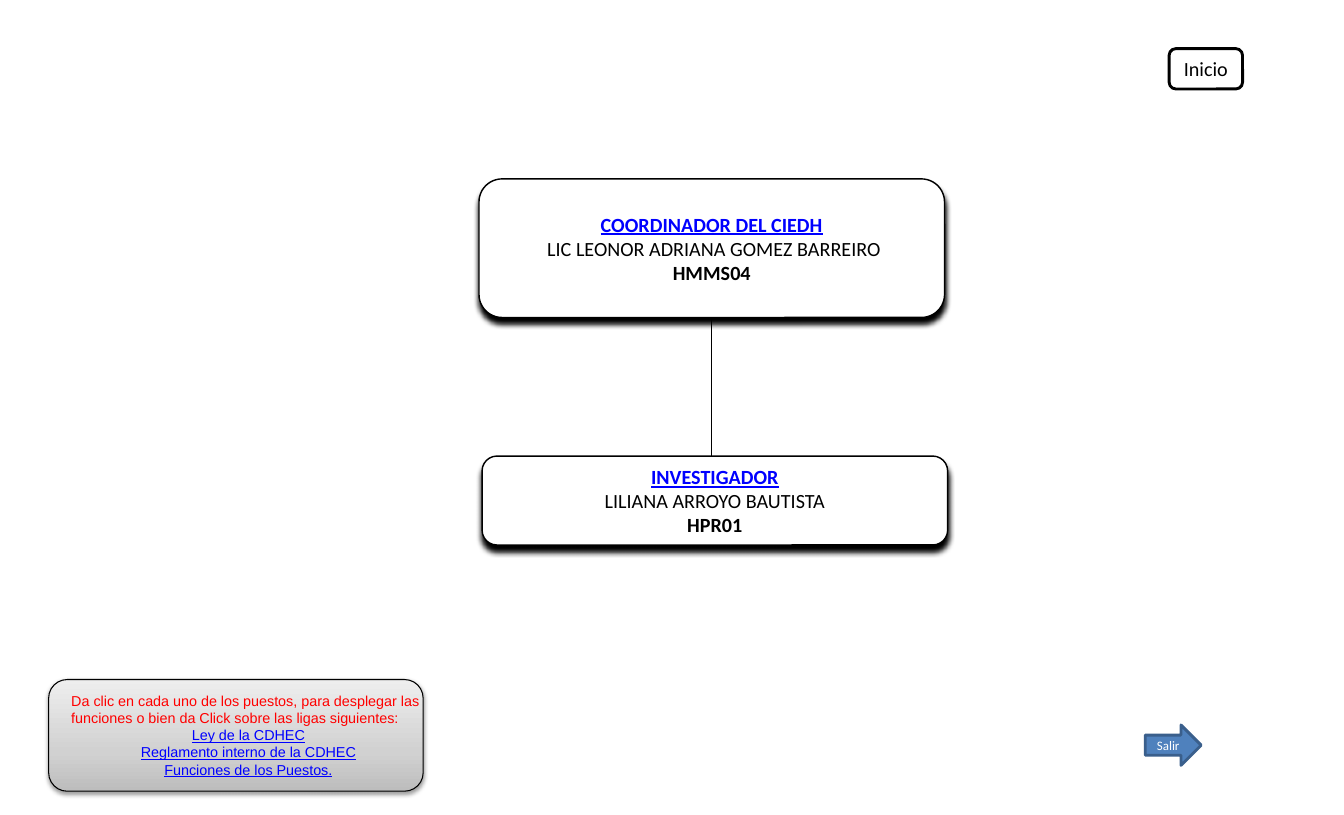
import pptx
import pptx.dml.color
import pptx.enum.shapes
import pptx.enum.text
import pptx.oxml
import pptx.oxml.ns
import pptx.util
from pptx.dml.color import RGBColor
from pptx.enum.shapes import MSO_SHAPE
from pptx.enum.text import MSO_ANCHOR, PP_ALIGN
from pptx.util import Inches

BLACK = RGBColor(0x00, 0x00, 0x00)
WHITE = RGBColor(0xFF, 0xFF, 0xFF)
RED = RGBColor(0xFF, 0x00, 0x00)
LINK_BLUE = RGBColor(0x00, 0x00, 0xFF)
ARROW_BLUE = RGBColor(0x4F, 0x81, 0xBD)
ARROW_EDGE = RGBColor(0x3A, 0x5F, 0x8C)
PANEL_STOPS = [
    (0, RGBColor(0xBD, 0xBD, 0xBD)),
    (35, RGBColor(0xD1, 0xD1, 0xD1)),
    (100, RGBColor(0xEE, 0xEE, 0xEE)),
]
LINKS = ["Ley de la CDHEC", "Reglamento interno de la CDHEC", "Funciones de los Puestos."]


def add_block(slide, kind, box, fill, line, line_width):
    """Add a shape without a shadow; a fill of None leaves the fill to the caller."""
    shape = slide.shapes.add_shape(kind, *map(Inches, box))
    shape.shadow.inherit = False
    if fill is not None:
        shape.fill.solid()
        shape.fill.fore_color.rgb = fill
    shape.line.color.rgb = line
    shape.line.width = pptx.util.Pt(line_width)
    return shape


def add_shadow(shape, opacity, blur, distance):
    """Cast a black shadow straight down; blur and distance are in points."""
    effects = shape._element.spPr.find(pptx.oxml.ns.qn("a:effectLst"))
    effects.append(pptx.oxml.parse_xml(
        f'<a:outerShdw {pptx.oxml.ns.nsdecls("a")} blurRad="{pptx.util.Pt(blur)}" '
        f'dist="{pptx.util.Pt(distance)}" dir="5400000" algn="ctr" rotWithShape="0">'
        f'<a:srgbClr val="{BLACK}"><a:alpha val="{opacity * 1000}"/></a:srgbClr>'
        '</a:outerShdw>'))


def set_gradient(shape, stops):
    """Fill with the stops running from bottom to top."""
    shape.fill.gradient()
    shape.fill.gradient_angle = 90
    stop_list = shape._element.spPr.find(".//" + pptx.oxml.ns.qn("a:gsLst"))
    for stop in list(stop_list):
        stop_list.remove(stop)
    for position, color in stops:
        stop_list.append(pptx.oxml.parse_xml(
            f'<a:gs {pptx.oxml.ns.nsdecls("a")} pos="{position * 1000}">'
            f'<a:srgbClr val="{color}"/></a:gs>'))


def write_line(paragraph, text, font, size, color, bold=False, underline=False,
               align=PP_ALIGN.CENTER):
    paragraph.text = text
    paragraph.alignment = align
    paragraph.font.name = font
    paragraph.font.size = pptx.util.Pt(size)
    paragraph.font.color.rgb = color
    paragraph.font.bold = bold
    paragraph.font.underline = underline


def add_post(slide, box, title, person, code):
    post = add_block(slide, MSO_SHAPE.ROUNDED_RECTANGLE, box, WHITE, BLACK, 1)
    add_shadow(post, 100, 4, 4)
    frame = post.text_frame
    frame.word_wrap = False
    frame.vertical_anchor = MSO_ANCHOR.MIDDLE
    frame.margin_left = frame.margin_right = Inches(0.17)
    frame.margin_top = frame.margin_bottom = Inches(0.09)
    write_line(frame.paragraphs[0], title, "Calibri", 14, LINK_BLUE, bold=True, underline=True)
    write_line(frame.add_paragraph(), person, "Calibri", 14, BLACK)
    write_line(frame.add_paragraph(), code, "Calibri", 14, BLACK, bold=True)
    return post


def add_button(slide, kind, box, label, size, color, fill, line):
    button = add_block(slide, kind, box, fill, line, 2)
    button.text_frame.vertical_anchor = MSO_ANCHOR.MIDDLE
    write_line(button.text_frame.paragraphs[0], label, "Calibri", size, color)


def add_help_panel(slide):
    panel = add_block(slide, MSO_SHAPE.ROUNDED_RECTANGLE, (0.47, 6.57, 3.62, 1.08),
                      None, BLACK, 0.75)
    set_gradient(panel, PANEL_STOPS)
    add_shadow(panel, 38, 3.1, 1.6)
    text_box = slide.shapes.add_textbox(*map(Inches, (0.59, 6.64, 3.62, 0.94)))
    frame = text_box.text_frame
    frame.word_wrap = True
    frame.auto_size = pptx.enum.text.MSO_AUTO_SIZE.SHAPE_TO_FIT_TEXT
    write_line(frame.paragraphs[0],
               "Da clic en cada uno de los puestos, para desplegar las funciones "
               "o bien da Click sobre las ligas siguientes:",
               "Arial", 10, RED, align=PP_ALIGN.LEFT)
    for link in LINKS:
        write_line(frame.add_paragraph(), link, "Arial", 10, LINK_BLUE, underline=True)


def add_post_link(slide, upper, lower):
    """Draw a vertical line from the upper post down to the lower one."""
    center = upper.left + upper.width // 2
    connector = slide.shapes.add_connector(
        pptx.enum.shapes.MSO_CONNECTOR.STRAIGHT,
        center, upper.top + upper.height, center, lower.top)
    connector.begin_connect(upper, 2)
    connector.line.color.rgb = BLACK
    connector.line.width = pptx.util.Pt(0.75)
    connector._element.spPr.append(
        pptx.oxml.parse_xml(f'<a:effectLst {pptx.oxml.ns.nsdecls("a")}/>'))


def main():
    presentation = pptx.Presentation()
    presentation.slide_width = Inches(12.99)
    presentation.slide_height = Inches(7.88)
    slide = presentation.slides.add_slide(presentation.slide_layouts[6])

    coordinator = add_post(slide, (4.63, 1.73, 4.5, 1.34), "COORDINADOR DEL CIEDH",
                           " LIC LEONOR ADRIANA GOMEZ BARREIRO", "HMMS04")
    add_button(slide, MSO_SHAPE.ROUNDED_RECTANGLE, (11.3, 0.47, 0.71, 0.39),
               "Inicio", 14, BLACK, WHITE, BLACK)
    add_help_panel(slide)
    add_button(slide, MSO_SHAPE.RIGHT_ARROW, (11.07, 7.01, 0.54, 0.39),
               "Salir", 9, WHITE, ARROW_BLUE, ARROW_EDGE)
    researcher = add_post(slide, (4.66, 4.41, 4.5, 0.86), "INVESTIGADOR",
                          "LILIANA ARROYO BAUTISTA", "HPR01")
    add_post_link(slide, coordinator, researcher)

    presentation.save("out.pptx")


if __name__ == "__main__":
    main()
